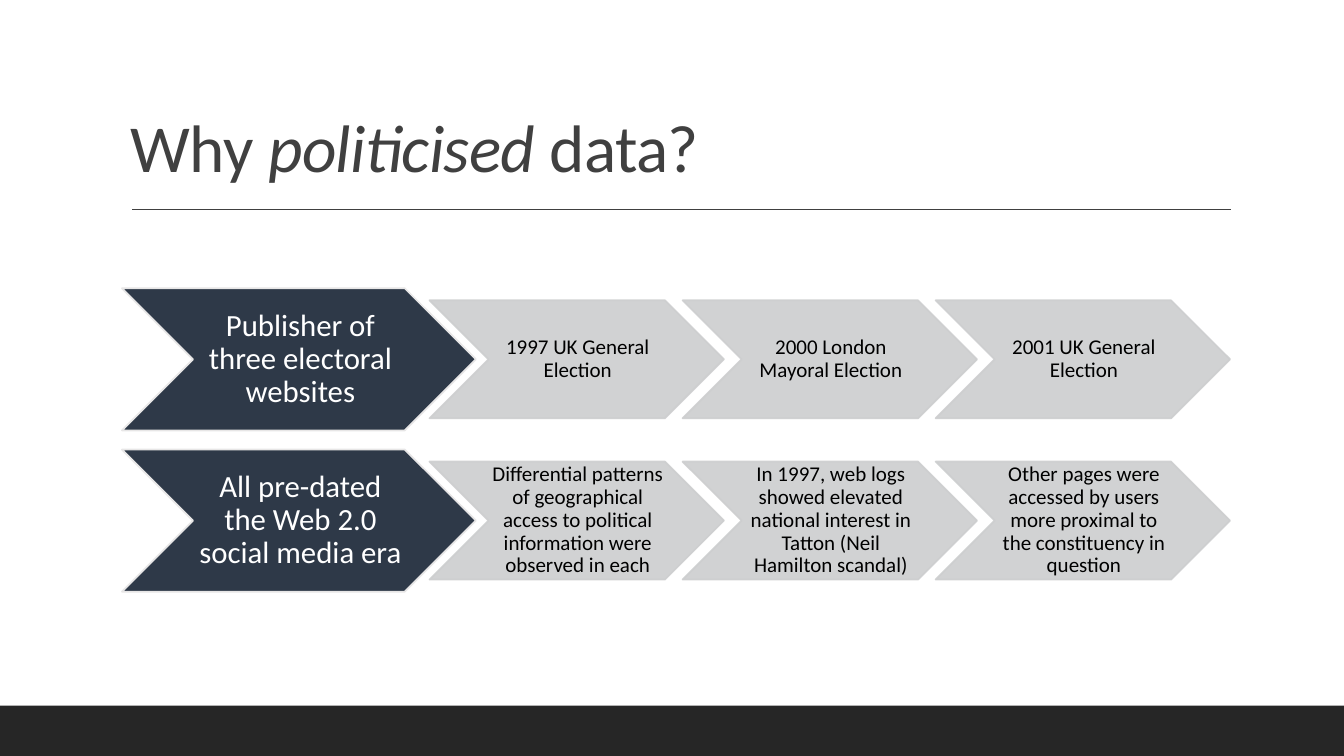
from dataclasses import dataclass

from lxml.etree import SubElement
from pptx import Presentation
from pptx.dml.color import RGBColor
from pptx.enum.shapes import MSO_CONNECTOR, MSO_SHAPE
from pptx.enum.text import MSO_ANCHOR, PP_ALIGN
from pptx.oxml.ns import qn
from pptx.shapes.autoshape import Shape
from pptx.slide import Slide
from pptx.text.text import TextFrame
from pptx.util import Inches, Pt


@dataclass(frozen=True)
class Theme:
    font: str = "Calibri"
    dark: str = "404040"
    footer: str = "262626"
    title_size: float = 48
    rule_width: float = 1


@dataclass(frozen=True)
class ChevronStyle:
    width: float
    height: float
    fill: str
    line: str
    text: str
    size: float
    inset_x: float
    inset_y: float
    opacity: int = 100
    line_width: float = 1.25


@dataclass(frozen=True)
class Row:
    center: float
    lead: str
    steps: tuple[str, ...]


THEME = Theme()
LEAD = ChevronStyle(3.51, 1.41, "2E3948", "E7E6E6", "FFFFFF", 22, 0.03, 0.02)
STEP = ChevronStyle(2.92, 1.17, "CDCECF", "CDCECF", "000000", 15, 0.02, 0.01, opacity=90)

LEAD_LEFT = 1.21
STEP_LEFT = 4.26
STEP_PITCH = 2.51

ROWS = (
    Row(3.565, "Publisher of three electoral websites", (
        "1997 UK General Election",
        "2000 London Mayoral Election",
        "2001 UK General Election",
    )),
    Row(5.165, "All pre-dated the Web 2.0 social media era", (
        "Differential patterns of geographical access to political information "
        "were observed in each",
        "In 1997, web logs showed elevated national interest in Tatton "
        "(Neil Hamilton scandal)",
        "Other pages were accessed by users more proximal to the constituency in question",
    )),
)


def set_attrs(target: object, values: dict[str, object]) -> None:
    for name, value in values.items():
        setattr(target, name, value)


def set_opacity(sp: Shape, percent: int) -> None:
    """Apply one opacity to both the fill and the outline."""
    for color in sp._element.spPr.iter(qn("a:srgbClr")):
        SubElement(color, qn("a:alpha")).set("val", str(percent * 1000))


def add_run(tf: TextFrame, text: str, size: float, color: str, italic: bool = False):
    r = tf.paragraphs[0].add_run()
    r.text = text
    set_attrs(r.font, {"name": THEME.font, "size": Pt(size), "italic": italic})
    r.font.color.rgb = RGBColor.from_string(color)
    return r


def add_footer(s: Slide) -> None:
    sp = s.shapes.add_shape(MSO_SHAPE.RECTANGLE, 0, Inches(7), Inches(13.33), Inches(0.5))
    sp.shadow.inherit = False
    sp.fill.solid()
    sp.fill.fore_color.rgb = RGBColor.from_string(THEME.footer)
    sp.line.fill.background()


def add_title(s: Slide) -> None:
    sp = s.shapes.add_textbox(Inches(1.2), Inches(0.31), Inches(11), Inches(1.59))
    tf = sp.text_frame
    set_attrs(tf, {"word_wrap": True, "vertical_anchor": MSO_ANCHOR.BOTTOM})
    tf.paragraphs[0].line_spacing = 0.9
    for text, italic in (("Why ", False), ("politicised", True), (" data?", False)):
        r = add_run(tf, text, THEME.title_size, THEME.dark, italic)
        r.font._element.set("spc", "-50")


def add_title_rule(s: Slide) -> None:
    y = Inches(2.08)
    rule = s.shapes.add_connector(MSO_CONNECTOR.STRAIGHT, Inches(1.31), y, Inches(12.21), y)
    rule.line.color.rgb = RGBColor.from_string(THEME.dark)
    rule.line.width = Pt(THEME.rule_width)
    SubElement(rule._element.spPr, qn("a:effectLst"))


def add_chevron(s: Slide, left: float, center: float, text: str, style: ChevronStyle) -> None:
    """Draw a chevron centred vertically on the given height."""
    sp = s.shapes.add_shape(
        MSO_SHAPE.CHEVRON, Inches(left), Inches(center - style.height / 2),
        Inches(style.width), Inches(style.height),
    )
    sp.shadow.inherit = False
    sp.fill.solid()
    sp.fill.fore_color.rgb = RGBColor.from_string(style.fill)
    sp.line.color.rgb = RGBColor.from_string(style.line)
    sp.line.width = Pt(style.line_width)
    if style.opacity < 100:
        set_opacity(sp, style.opacity)
    tf = sp.text_frame
    set_attrs(tf, {
        "word_wrap": True,
        "vertical_anchor": MSO_ANCHOR.MIDDLE,
        "margin_left": Inches(style.inset_x),
        "margin_right": 0,
        "margin_top": Inches(style.inset_y),
        "margin_bottom": Inches(style.inset_y),
    })
    set_attrs(tf.paragraphs[0], {"alignment": PP_ALIGN.CENTER, "line_spacing": 0.9})
    add_run(tf, text, style.size, style.text)


def main() -> None:
    prs = Presentation()
    set_attrs(prs, {"slide_width": Inches(13.33), "slide_height": Inches(7.5)})
    s = prs.slides.add_slide(prs.slide_layouts[6])
    add_footer(s)
    add_title_rule(s)
    add_title(s)
    for row in ROWS:
        add_chevron(s, LEAD_LEFT, row.center, row.lead, LEAD)
        for i, step in enumerate(row.steps):
            add_chevron(s, STEP_LEFT + i * STEP_PITCH, row.center, step, STEP)
    prs.save("out.pptx")


if __name__ == "__main__":
    main()
